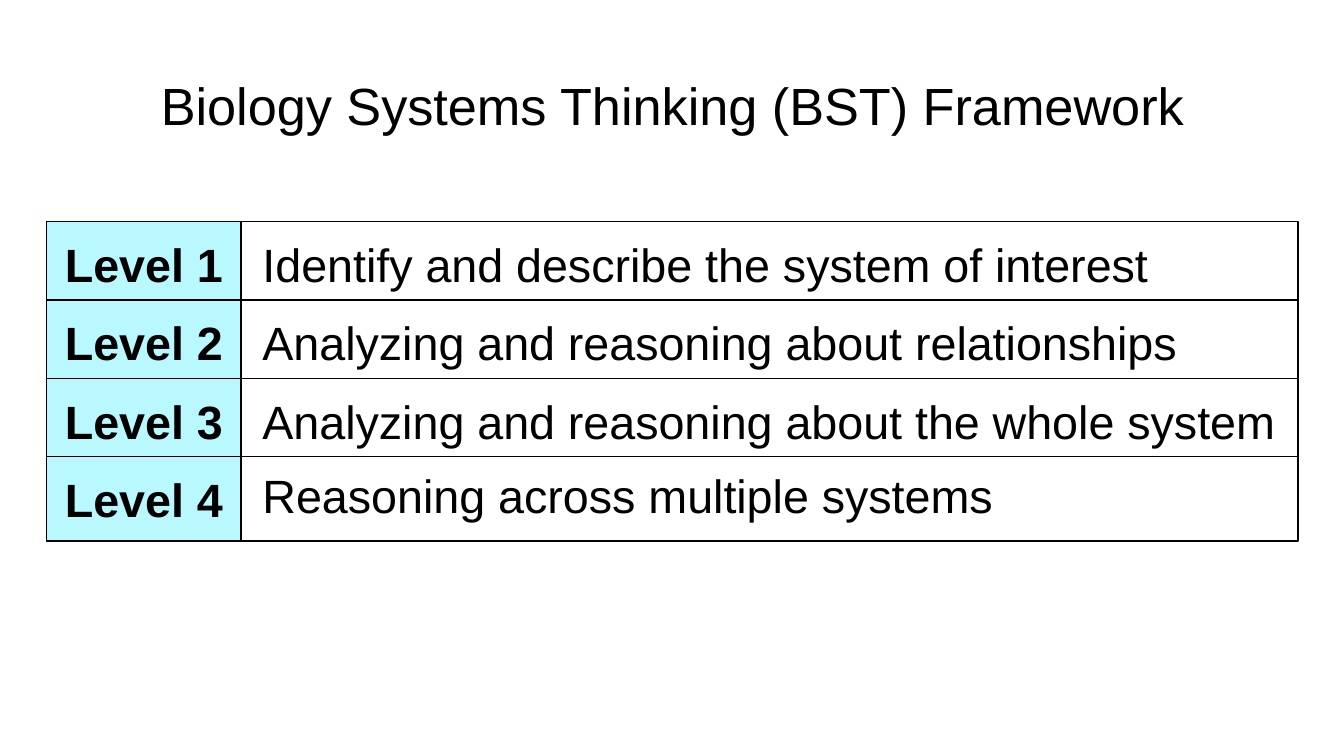
"""Build the Biology Systems Thinking framework slide."""
from pptx import Presentation, util as u
from pptx.dml.color import RGBColor
from pptx.enum import shapes, text

COLOURS = {"ink": "000000", "level": "BAF8FF", "description": "FFFFFF"}
DESCRIPTIONS = [
    "Identify and describe the system of interest",
    "Analyzing and reasoning about relationships",
    "Analyzing and reasoning about the whole system",
    "Reasoning across multiple systems",
]
FIRST_TOP, PITCH, HEIGHT = 4.19, 1.48, 1.6
INSET, INDENTED_INSET = 0.25, 0.56


def write(box, wording, size, align, bold=False, left_inset=INSET):
    frame = box.text_frame
    frame.word_wrap = True
    frame.vertical_anchor = text.MSO_ANCHOR.MIDDLE
    frame.margin_left = u.Cm(left_inset)
    frame.margin_top = frame.margin_right = frame.margin_bottom = u.Cm(INSET)
    paragraph = frame.paragraphs[0]
    paragraph.text = wording
    paragraph.alignment = align
    paragraph.font.name = "Arial"
    paragraph.font.size = u.Pt(size)
    paragraph.font.bold = bold
    paragraph.font.color.rgb = RGBColor.from_string(COLOURS["ink"])
    return paragraph


def add_cell(row, left, top, width, fill):
    cell = row.shapes.add_shape(shapes.MSO_SHAPE.RECTANGLE,
                                u.Cm(left), u.Cm(top), u.Cm(width), u.Cm(HEIGHT))
    cell.shadow.inherit = False
    cell.fill.solid()
    cell.fill.fore_color.rgb = RGBColor.from_string(COLOURS[fill])
    cell.line.color.rgb = RGBColor.from_string(COLOURS["ink"])
    cell.line.width = u.Pt(0.75)
    return cell


deck = Presentation()
deck.slide_width, deck.slide_height = u.Cm(25.4), u.Cm(14.29)
slide = deck.slides.add_slide(deck.slide_layouts[6])

for index, wording in enumerate(DESCRIPTIONS):
    top = FIRST_TOP + index * PITCH
    row = slide.shapes.add_group_shape()
    description = add_cell(row, 4.4, top, 20.13, "description")
    sentence = write(description, wording, 25, text.PP_ALIGN.LEFT, left_inset=INDENTED_INSET)
    if index == len(DESCRIPTIONS) - 1:
        sentence.line_spacing = 0.9
    level = add_cell(row, 0.88, top, 3.68, "level")
    write(level, f"Level {index + 1}", 25, text.PP_ALIGN.CENTER, bold=True)

title = slide.shapes.add_textbox(u.Cm(0.87), u.Cm(1.25), u.Cm(23.67), u.Cm(HEIGHT))
heading = write(title, "Biology Systems Thinking (BST) Framework", 28, text.PP_ALIGN.CENTER)
heading.line_spacing = 0.9

deck.save("out.pptx")
